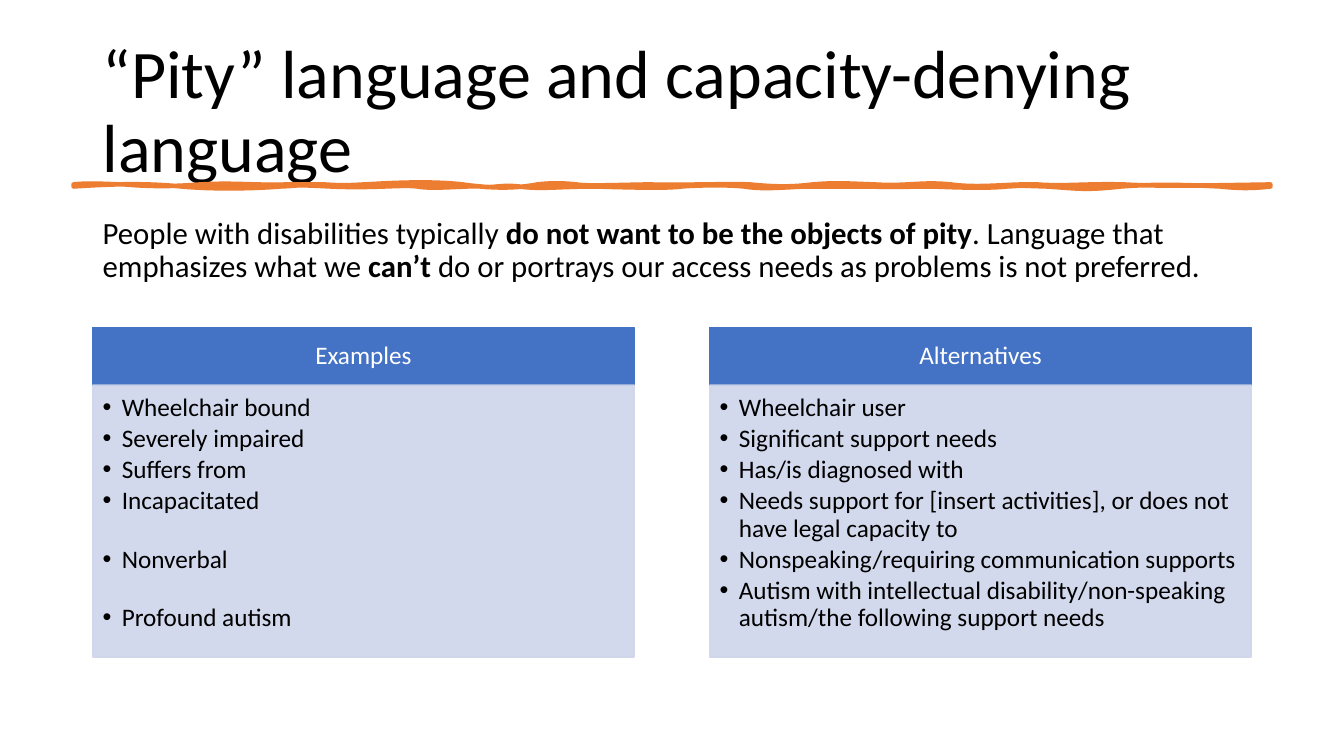
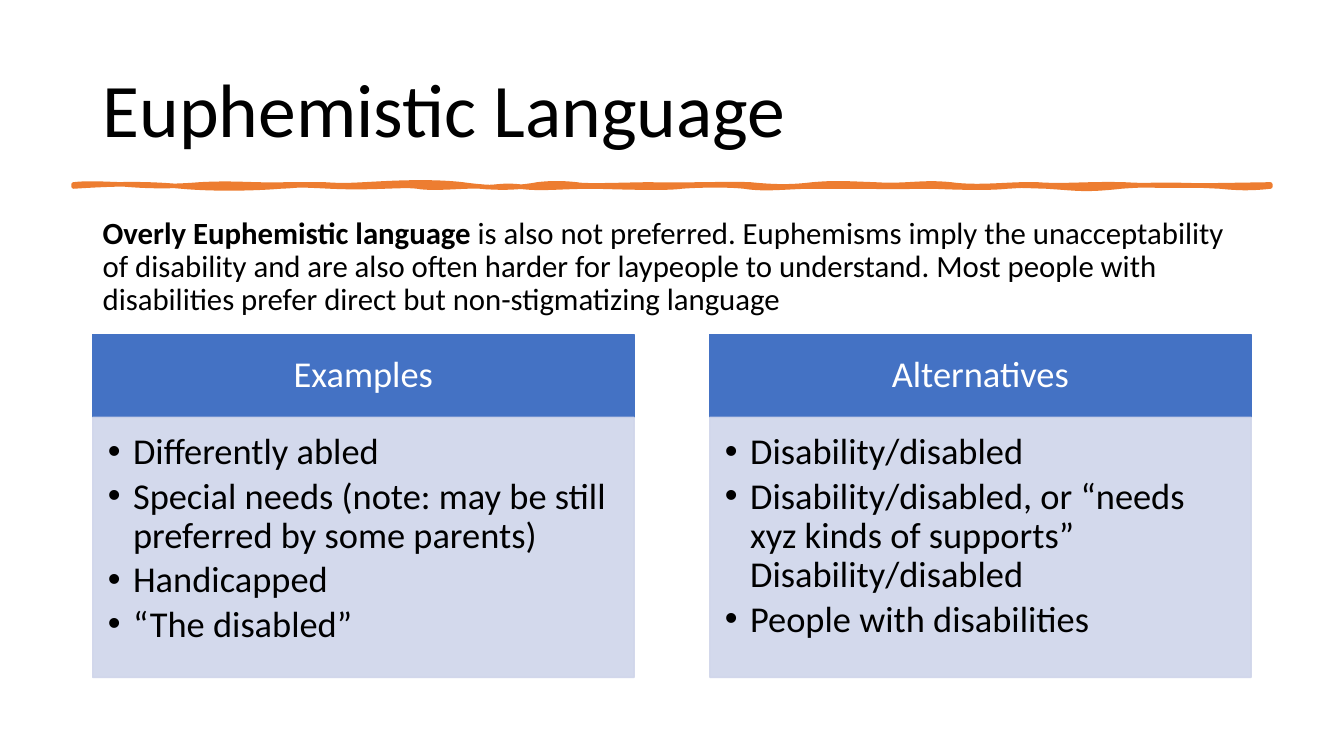
from dataclasses import dataclass
from typing import Any

from lxml.etree import SubElement
from pptx import Presentation
from pptx.dml.color import RGBColor
from pptx.enum.shapes import MSO_SHAPE as ShapeKind
from pptx.enum.text import MSO_ANCHOR as Anchor, PP_ALIGN as Align
from pptx.oxml.ns import qn
from pptx.util import Inches, Pt


@dataclass(frozen=True)
class Theme:
    font: str = "Calibri"
    text: str = "000000"
    light_text: str = "FFFFFF"
    header: str = "4472C4"
    panel: str = "CFD5EA"
    accent: str = "ED7D31"
    panel_alpha: int = 90
    intro_size: float = 22
    line_spacing: float = 0.9
    outline: float = 1
    brush: float = 3.25


@dataclass(frozen=True)
class Box:
    left: float
    top: float
    width: float
    height: float

    def lengths(self) -> tuple[int, ...]:
        return tuple(Inches(v) for v in (self.left, self.top, self.width, self.height))


@dataclass(frozen=True)
class TextRun:
    text: str
    bold: bool = False


@dataclass(frozen=True)
class Column:
    heading: str
    items: tuple[str, ...]


@dataclass(frozen=True)
class ColumnStyle:
    top: float
    header_height: float
    panel_height: float
    size: float
    indent: float
    gap_after: float
    header_insets: tuple[float, float, float, float]
    panel_insets: tuple[float, float, float, float]


@dataclass(frozen=True)
class LanguageSlide:
    title: str
    title_size: float
    intro: tuple[TextRun, ...]
    columns: tuple[Column, ...]
    style: ColumnStyle


THEME = Theme()
TITLE_BOX = Box(0.92, 0.4, 11.5, 1.45)
INTRO_BOX = Box(0.92, 2.11, 11.5, 4.65)
COLUMN_LEFT, COLUMN_WIDTH, COLUMN_GAP = 0.92, 5.37, 0.75
TEXT_INSETS = (0.1, 0.05, 0.1, 0.05)
BRUSH_LEFT, BRUSH_RIGHT, BRUSH_TOP, BRUSH_BOTTOM = 0.73, 12.6, 1.83, 1.85

TOP_CURVES = (
    (0.89, 1.81, 1.11, 1.83, 1.24), (1.36, 1.84, 1.62, 1.86, 1.98),
    (2.34, 1.81, 2.51, 1.84, 2.84), (3.17, 1.83, 3.07, 1.83, 3.22),
    (3.38, 1.84, 3.42, 1.84, 3.61), (3.8, 1.82, 4.24, 1.79, 4.59),
    (4.94, 1.88, 5.17, 1.86, 5.33), (5.49, 1.81, 5.63, 1.82, 5.72),
    (5.81, 1.85, 6.25, 1.83, 6.46), (6.67, 1.84, 7.23, 1.82, 7.44),
    (7.65, 1.85, 7.82, 1.86, 8.06), (8.3, 1.81, 8.38, 1.82, 8.68),
    (8.99, 1.85, 9.14, 1.8, 9.43), (9.72, 1.87, 10.02, 1.82, 10.29),
    (10.55, 1.85, 10.78, 1.82, 11.15), (11.51, 1.85, 11.99, 1.84, 12.6),
)
BOTTOM_CURVES = (
    (12.6, 1.84, 12.6, 1.84, 12.6), (12.42, 1.87, 12.3, 1.87, 12.1),
    (11.9, 1.84, 11.49, 1.82, 11.12), (10.75, 1.89, 10.7, 1.87, 10.38),
    (10.05, 1.84, 10.18, 1.84, 9.99), (9.8, 1.87, 9.48, 1.86, 9.25),
    (9.02, 1.85, 8.84, 1.86, 8.63), (8.41, 1.85, 8.28, 1.85, 8),
    (7.73, 1.86, 7.57, 1.88, 7.38), (7.19, 1.83, 6.88, 1.84, 6.76),
    (6.63, 1.87, 6.24, 1.86, 5.9), (5.55, 1.85, 5.37, 1.88, 5.15),
    (4.94, 1.83, 4.91, 1.87, 4.77), (4.63, 1.84, 4.3, 1.88, 4.14),
    (3.99, 1.83, 3.71, 1.87, 3.28), (2.86, 1.83, 3.03, 1.84, 2.78),
    (2.53, 1.87, 2.13, 1.88, 1.8), (1.47, 1.82, 1.18, 1.82, 0.73),
)

SLIDES = (
    LanguageSlide(
        "“Pity” language and capacity-denying language", 48.6,
        (
            TextRun("People with disabilities typically "),
            TextRun("do not want to be the objects of pity", True),
            TextRun(". Language that emphasizes what we "),
            TextRun("can’t", True),
            TextRun(" do or portrays our access needs as problems is not preferred."),
        ),
        (
            Column("Examples", (
                "Wheelchair bound", "Severely impaired", "Suffers from",
                "Incapacitated\n", "Nonverbal\n", "Profound autism",
            )),
            Column("Alternatives", (
                "Wheelchair user", "Significant support needs", "Has/is diagnosed with",
                "Needs support for [insert activities], or does not have legal capacity to",
                "Nonspeaking/requiring communication supports",
                "Autism with intellectual disability/non-speaking autism/the following support needs",
            )),
        ),
        ColumnStyle(3.25, 0.57, 2.7, 18, 0.19, 2.7,
                    (0.14, 0.08, 0.14, 0.08), (0.1, 0.1, 0.14, 0.16)),
    ),
    LanguageSlide(
        "Euphemistic Language", 54,
        (
            TextRun("Overly Euphemistic language", True),
            TextRun(" is also not preferred. Euphemisms imply the unacceptability of disability "
                    "and are also often harder for laypeople to understand. Most people with "
                    "disabilities prefer direct but non-stigmatizing language"),
        ),
        (
            Column("Examples", (
                "Differently abled",
                "Special needs (note: may be still preferred by some parents)",
                "Handicapped", "“The disabled”",
            )),
            Column("Alternatives", (
                "Disability/disabled",
                "Disability/disabled, or “needs xyz kinds of supports”\nDisability/disabled",
                "People with disabilities",
            )),
        ),
        ColumnStyle(3.32, 0.82, 2.58, 26, 0.25, 3.6,
                    (0.2, 0.12, 0.2, 0.12), (0.15, 0.16, 0.2, 0.23)),
    ),
)


def apply_format(target: Any, values: dict[str, Any]) -> None:
    for name, value in values.items():
        setattr(target, name, value)


def set_frame(shape: Any, insets: tuple[float, ...], anchor: Any) -> Any:
    left, top, right, bottom = (Inches(inset) for inset in insets)
    apply_format(shape.text_frame, {
        "word_wrap": True, "vertical_anchor": anchor,
        "margin_left": left, "margin_top": top,
        "margin_right": right, "margin_bottom": bottom,
    })
    return shape.text_frame


def write_paragraph(paragraph: Any, runs: tuple[TextRun, ...], size: float,
                    color: str = THEME.text, **layout: Any) -> None:
    apply_format(paragraph, {"line_spacing": THEME.line_spacing,
                             "alignment": Align.LEFT, **layout})
    for part in runs:
        for index, line in enumerate(part.text.split("\n")):
            if index:
                paragraph.add_line_break()
            if line:
                run = paragraph.add_run()
                run.text = line
                apply_format(run.font, {"name": THEME.font, "size": Pt(size),
                                        "bold": part.bold})
                run.font.color.rgb = RGBColor.from_string(color)


def add_bullet(paragraph: Any, indent: float) -> None:
    properties = paragraph._p.get_or_add_pPr()
    properties.set("marL", str(Inches(indent)))
    properties.set("indent", str(-Inches(indent)))
    SubElement(properties, qn("a:buFont"), typeface="Arial")
    SubElement(properties, qn("a:buChar"), char="•")


def paint(shape: Any, color: str, line_width: float) -> None:
    shape.shadow.inherit = False
    shape.fill.solid()
    shape.fill.fore_color.rgb = RGBColor.from_string(color)
    shape.line.color.rgb = RGBColor.from_string(color)
    shape.line.width = Pt(line_width)


def add_text(slide: Any, box: Box, runs: tuple[TextRun, ...], size: float,
             anchor: Any, **layout: Any) -> None:
    shape = slide.shapes.add_textbox(*box.lengths())
    frame = set_frame(shape, TEXT_INSETS, anchor)
    write_paragraph(frame.paragraphs[0], runs, size, **layout)


def add_rectangle(slide: Any, box: Box, color: str) -> Any:
    shape = slide.shapes.add_shape(ShapeKind.RECTANGLE, *box.lengths())
    paint(shape, color, THEME.outline)
    return shape


def add_path_step(outline: Any, kind: str, *points: tuple[float, float]) -> None:
    step = SubElement(outline, qn(kind))
    for x, y in points:
        SubElement(step, qn("a:pt"), x=str(Inches(x - BRUSH_LEFT)),
                   y=str(Inches(y - BRUSH_TOP)))


def add_brush_line(slide: Any) -> None:
    builder = slide.shapes.build_freeform(Inches(BRUSH_LEFT), Inches(BRUSH_TOP))
    builder.add_line_segments([(Inches(BRUSH_RIGHT), Inches(BRUSH_BOTTOM))])
    shape = builder.convert_to_shape()
    paint(shape, THEME.accent, THEME.brush)
    outline = next(shape._element.iter(qn("a:path")))
    for step in list(outline):
        outline.remove(step)
    add_path_step(outline, "a:moveTo", (BRUSH_LEFT, BRUSH_TOP))
    for curves, end_y in ((TOP_CURVES, BRUSH_TOP), (BOTTOM_CURVES, BRUSH_BOTTOM)):
        for x1, y1, x2, y2, end_x in curves:
            add_path_step(outline, "a:cubicBezTo", (x1, y1), (x2, y2), (end_x, end_y))
    SubElement(outline, qn("a:close"))


def add_column(slide: Any, column: Column, left: float, style: ColumnStyle) -> None:
    header = add_rectangle(
        slide, Box(left, style.top, COLUMN_WIDTH, style.header_height), THEME.header)
    frame = set_frame(header, style.header_insets, Anchor.MIDDLE)
    write_paragraph(frame.paragraphs[0], (TextRun(column.heading),), style.size,
                    THEME.light_text, alignment=Align.CENTER)

    panel = add_rectangle(
        slide, Box(left, style.top + style.header_height, COLUMN_WIDTH, style.panel_height),
        THEME.panel)
    for color in panel._element.spPr.iter(qn("a:srgbClr")):
        SubElement(color, qn("a:alpha"), val=str(THEME.panel_alpha * 1000))
    frame = set_frame(panel, style.panel_insets, Anchor.TOP)
    for index, item in enumerate(column.items):
        paragraph = frame.add_paragraph() if index else frame.paragraphs[0]
        write_paragraph(paragraph, (TextRun(item),), style.size,
                        space_after=Pt(style.gap_after))
        add_bullet(paragraph, style.indent)


def add_language_slide(presentation: Any, content: LanguageSlide) -> None:
    slide = presentation.slides.add_slide(presentation.slide_layouts[6])
    add_text(slide, TITLE_BOX, (TextRun(content.title),), content.title_size, Anchor.MIDDLE)
    add_brush_line(slide)
    add_text(slide, INTRO_BOX, content.intro, THEME.intro_size, Anchor.TOP,
             space_before=Pt(10))
    for index, column in enumerate(content.columns):
        left = COLUMN_LEFT + index * (COLUMN_WIDTH + COLUMN_GAP)
        add_column(slide, column, left, content.style)


def main() -> None:
    presentation = Presentation()
    apply_format(presentation, {"slide_width": Inches(13.33), "slide_height": Inches(7.5)})
    for content in SLIDES:
        add_language_slide(presentation, content)
    presentation.save("out.pptx")


if __name__ == "__main__":
    main()
